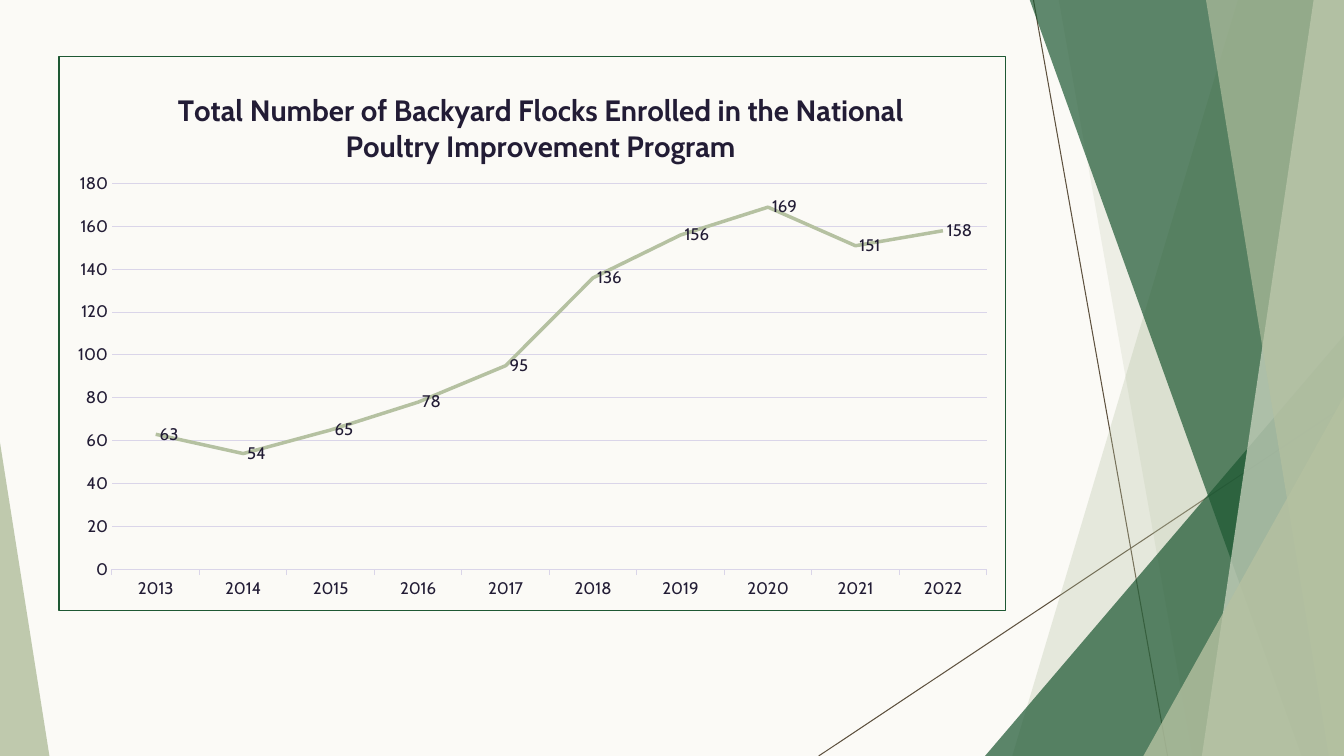
from typing import NamedTuple

from pptx import Presentation
from pptx.chart.axis import CategoryAxis, ValueAxis
from pptx.chart.data import CategoryChartData
from pptx.dml.color import RGBColor
from pptx.enum.chart import XL_CHART_TYPE, XL_LABEL_POSITION, XL_MARKER_STYLE, XL_TICK_MARK
from pptx.enum.shapes import MSO_CONNECTOR, MSO_SHAPE
from pptx.oxml import parse_xml
from pptx.oxml.ns import nsdecls, qn
from pptx.oxml.xmlchemy import BaseOxmlElement
from pptx.shapes.autoshape import Shape
from pptx.slide import Slide
from pptx.text.text import Font
from pptx.util import Inches, Pt

CREAM = RGBColor(0xFB, 0xFA, 0xF6)
BROWN = RGBColor(0x5D, 0x51, 0x3E)
SAGE = RGBColor(0xB5, 0xC1, 0xA1)
PALE_SAGE = RGBColor(0xD3, 0xDA, 0xC7)
FOREST = RGBColor(0x1E, 0x58, 0x33)
INK = RGBColor(0x22, 0x1C, 0x35)
LAVENDER = RGBColor(0xDA, 0xD5, 0xE9)
FONT_NAME = "Cabin"
WIDTH, HEIGHT = 13.33, 7.5
BAND_TOP = -0.01

TITLE = "Total Number of Backyard Flocks Enrolled in the National Poultry Improvement Program"
FIRST_YEAR = 2013
FLOCKS = (63, 54, 65, 78, 95, 136, 156, 169, 151, 158)


class Ray(NamedTuple):
    start: tuple[float, float]
    end: tuple[float, float]


class Band(NamedTuple):
    """A strip from a slanted left edge to the right side of the page."""
    top_x: float
    bottom_x: float
    color: RGBColor
    opacity: int


class Wedge(NamedTuple):
    """A right triangle standing on the bottom of the page."""
    left: float
    top: float
    width: float
    apex: float
    color: RGBColor
    opacity: int


RAYS = (Ray((10.25, 0), (11.58, HEIGHT)), Ray((WIDTH, 4.03), (8.12, HEIGHT)))
FACETS = (
    Band(12.28, 10.04, SAGE, 30),
    Band(10.5, 11.83, SAGE, 20),
    Wedge(9.77, 3.33, 3.56, 1, FOREST, 72),
    Band(10.21, 12.91, FOREST, 70),
    Band(13.03, 11.92, PALE_SAGE, 70),
    Band(11.96, 13.18, SAGE, 65),
    Wedge(11.34, 3.93, 1.99, 1, SAGE, 80),
    Wedge(0, 4.39, 0.49, 0, SAGE, 85),
)


def draw_ray(page: Slide, ray: Ray) -> None:
    points = [Inches(value) for value in (*ray.start, *ray.end)]
    line = page.shapes.add_connector(MSO_CONNECTOR.STRAIGHT, *points)
    line.line.color.rgb = BROWN
    line.line.width = Pt(0.75)
    line.element.spPr.append(parse_xml(f"<a:effectLst {nsdecls('a')}/>"))


def build_band(page: Slide, band: Band) -> Shape:
    corners = [(WIDTH, BAND_TOP), (WIDTH, HEIGHT), (band.bottom_x, HEIGHT)]
    builder = page.shapes.build_freeform(
        Inches(band.top_x), Inches(BAND_TOP)
    )
    builder.add_line_segments([(Inches(x), Inches(y)) for x, y in corners], close=True)
    return builder.convert_to_shape()


def build_wedge(page: Slide, wedge: Wedge) -> Shape:
    shape = page.shapes.add_shape(
        MSO_SHAPE.ISOSCELES_TRIANGLE, Inches(wedge.left), Inches(wedge.top),
        Inches(wedge.width), Inches(HEIGHT - wedge.top),
    )
    shape.adjustments[0] = wedge.apex
    return shape


def draw_facet(page: Slide, facet: Band | Wedge) -> None:
    shape = build_band(page, facet) if isinstance(facet, Band) else build_wedge(page, facet)
    shape.shadow.inherit = False
    shape.line.fill.background()
    shape.fill.solid()
    shape.fill.fore_color.rgb = facet.color
    color = shape.element.spPr.find(qn("a:solidFill"))[0]
    color.append(parse_xml(f'<a:alpha {nsdecls("a")} val="{facet.opacity * 1000}"/>'))


def style_font(font: Font, size: float, bold: bool = False) -> None:
    font.name = FONT_NAME
    font.size = Pt(size)
    font.bold = bold
    font.color.rgb = INK


def style_axis(axis: CategoryAxis | ValueAxis, tick: XL_TICK_MARK) -> None:
    axis.major_tick_mark = tick
    axis.minor_tick_mark = XL_TICK_MARK.NONE
    style_font(axis.tick_labels.font, 12)


def set_layout(parent: BaseOxmlElement, index: int, target: str, **place: float) -> None:
    """Fix a chart part at fractions of the chart's size."""
    old = parent.find(qn("c:layout"))
    if old is not None:
        parent.remove(old)
    modes = "".join(f'<c:{axis}Mode val="edge"/>' for axis in "xy")
    values = "".join(f'<c:{key} val="{value}"/>' for key, value in place.items())
    parent.insert(index, parse_xml(
        f"<c:layout {nsdecls('c')}><c:manualLayout>{target}{modes}{values}"
        "</c:manualLayout></c:layout>"
    ))


def add_flock_chart(page: Slide) -> None:
    data = CategoryChartData()
    data.categories = [str(FIRST_YEAR + step) for step in range(len(FLOCKS))]
    data.add_series("Series 1", FLOCKS)
    chart = page.shapes.add_chart(
        XL_CHART_TYPE.LINE, Inches(0.58), Inches(0.56), Inches(9.4), Inches(5.5), data
    ).chart
    style_font(chart.font, 10)
    chart.has_legend = False

    chart.has_title = True
    title = chart.chart_title
    title.include_in_layout = False
    para = title.text_frame.paragraphs[0]
    para.text = TITLE
    style_font(para.runs[0].font, 21, bold=True)
    set_layout(title.element, 1, "", x=0.12, y=0.05)

    years, counts = chart.category_axis, chart.value_axis
    style_axis(years, XL_TICK_MARK.OUTSIDE)
    years.format.line.color.rgb = LAVENDER
    years.format.line.width = Pt(0.75)
    style_axis(counts, XL_TICK_MARK.NONE)
    counts.format.line.fill.background()
    counts.minimum_scale, counts.maximum_scale, counts.major_unit = 0, 180, 20
    counts.tick_labels.number_format = "0"
    counts.tick_labels.number_format_is_linked = False
    counts.major_gridlines.format.line.color.rgb = LAVENDER
    counts.major_gridlines.format.line.width = Pt(0.75)

    plot = chart.plots[0]
    plot.vary_by_categories = False
    series = plot.series[0]
    series.smooth = False
    series.marker.style = XL_MARKER_STYLE.NONE
    series.format.line.color.rgb = SAGE
    series.format.line.width = Pt(2.5)
    labels = series.data_labels
    labels.show_value = True
    labels.position = XL_LABEL_POSITION.RIGHT
    style_font(labels.font, 12)

    chart_xml = chart.element.find(qn("c:chart"))
    set_layout(chart_xml.find(qn("c:plotArea")), 0, '<c:layoutTarget val="inner"/>',
               x=0.056, y=0.229, w=0.924, h=0.697)
    chart_xml.addnext(parse_xml(
        f"<c:spPr {nsdecls('c', 'a')}><a:noFill/><a:ln w=\"{Pt(0.75)}\"><a:solidFill>"
        f'<a:srgbClr val="{FOREST}"/></a:solidFill></a:ln></c:spPr>'
    ))


def main() -> None:
    deck = Presentation()
    deck.slide_width, deck.slide_height = Inches(WIDTH), Inches(HEIGHT)
    page = deck.slides.add_slide(deck.slide_layouts[6])
    page.background.fill.solid()
    page.background.fill.fore_color.rgb = CREAM
    for ray in RAYS:
        draw_ray(page, ray)
    for facet in FACETS:
        draw_facet(page, facet)
    add_flock_chart(page)
    deck.save("out.pptx")


if __name__ == "__main__":
    main()
